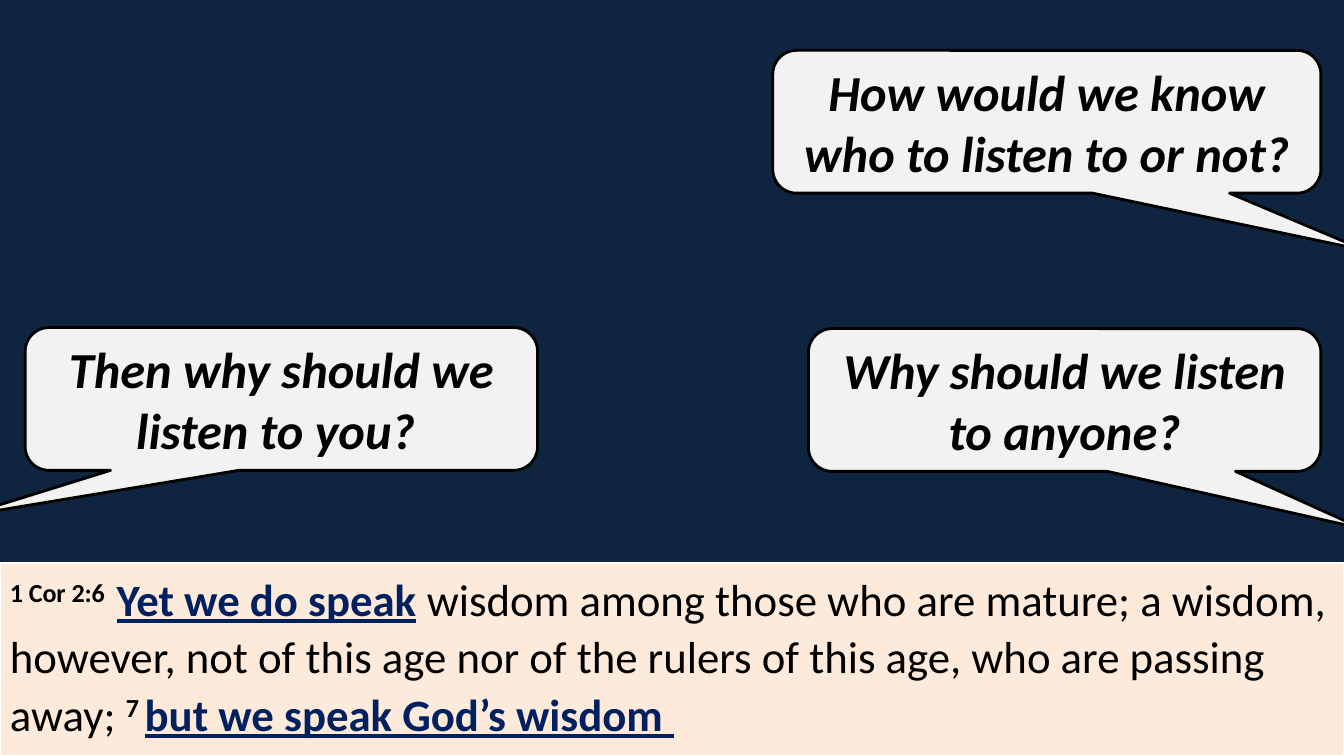
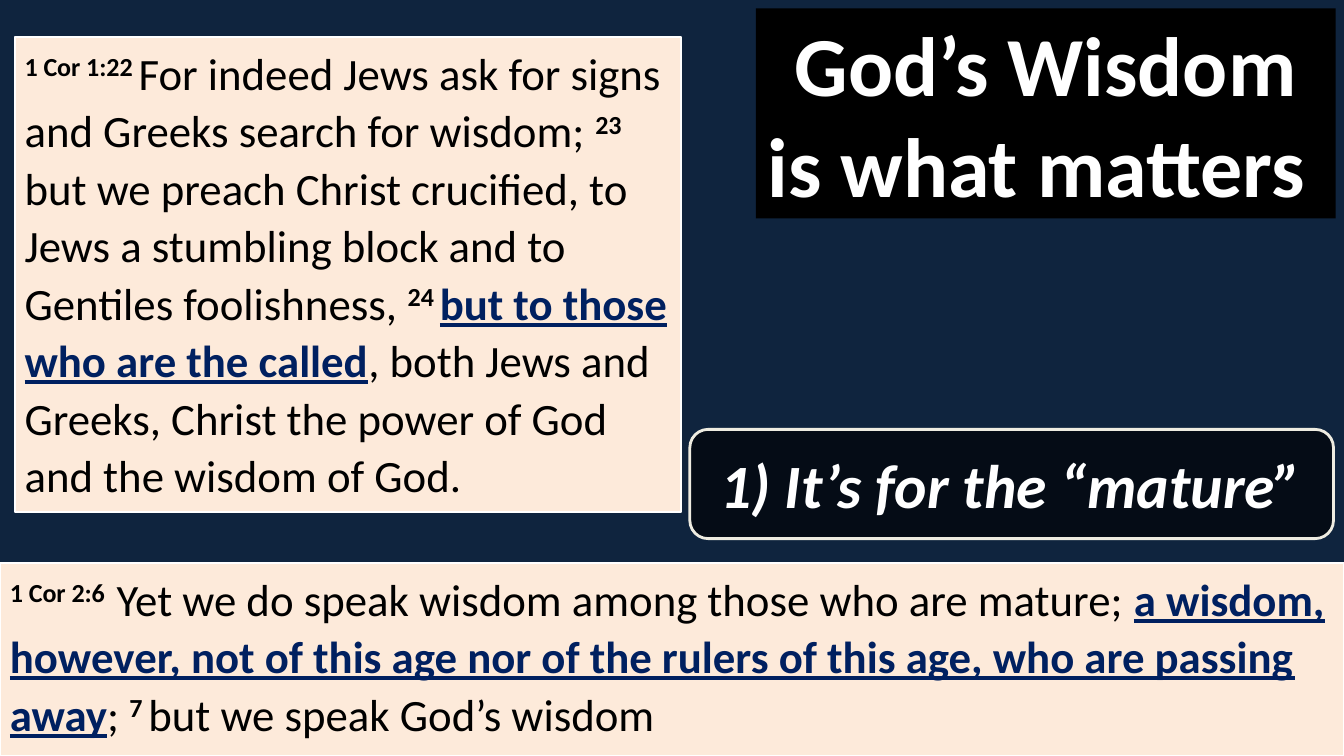
"""Builds two slides of callouts and verse panels on God's wisdom."""
from lxml import etree
from pptx import Presentation
from pptx import util as u
from pptx.dml.color import RGBColor
from pptx.enum import shapes, text
from pptx.oxml import ns

PX = 9525
FONT = "Calibri"
NIGHT = RGBColor(0x0F, 0x24, 0x3E)
PEACH = RGBColor(0xFD, 0xEA, 0xDA)
PALE = RGBColor(0xF2, 0xF2, 0xF2)
CREAM = RGBColor(0xEE, 0xEC, 0xE1)
NAVY = RGBColor(0x00, 0x20, 0x60)
BLACK = RGBColor(0x00, 0x00, 0x00)
WHITE = RGBColor(0xFF, 0xFF, 0xFF)

RECT = shapes.MSO_SHAPE.RECTANGLE
CALLOUT = shapes.MSO_SHAPE.ROUNDED_RECTANGULAR_CALLOUT
PANEL = (0, 536, 1280, 184)


def add_box(slide, kind, box, fill, line, width):
    sp = slide.shapes.add_shape(kind, *[v * PX for v in box])
    sp.shadow.inherit = False
    sp.fill.solid()
    sp.fill.fore_color.rgb = fill
    sp.line.color.rgb = line
    sp.line.width = u.Pt(width)
    sp.text_frame.word_wrap = True
    return sp


def write(tf, runs, size, align, italic=False):
    p = tf.paragraphs[0]
    p.alignment = align
    for words, style, color in runs:
        r = p.add_run()
        r.text = words
        r.font.name = FONT
        r.font.size = u.Pt(size)
        r.font.bold = style != "plain"
        r.font.italic = italic
        r.font.underline = style == "key"
        r.font.color.rgb = color
        if style == "ref":
            r._r.get_or_add_rPr().set("baseline", "30000")
    return p


prs = Presentation()
prs.slide_width, prs.slide_height = 1280 * PX, 720 * PX
questions = prs.slides.add_slide(prs.slide_layouts[6])
wisdom = prs.slides.add_slide(prs.slide_layouts[5])
for s in prs.slides:
    s.background.fill.solid()
    s.background.fill.fore_color.rgb = NIGHT

verses = [
    (questions, PANEL, [
        ("1 Cor 2:6  ", "ref", BLACK),
        ("Yet we do speak", "key", NAVY),
        (" ", "bold", NAVY),
        ("wisdom among those who are mature; a wisdom, however, not of this age "
         "nor of the rulers of this age, who are passing away; ", "plain", BLACK),
        ("7 ", "ref", BLACK),
        ("but we speak God’s wisdom ", "key", NAVY)]),
    (wisdom, PANEL, [
        ("1 Cor 2:6  ", "ref", BLACK),
        ("Yet we do speak wisdom among those who are mature; ", "plain", BLACK),
        ("a wisdom, however, not of this age nor of the rulers of this age, "
         "who are passing away", "key", NAVY),
        ("; ", "plain", BLACK),
        ("7 ", "ref", BLACK),
        ("but we speak God’s wisdom", "plain", BLACK)]),
    (wisdom, (14, 35, 635, 453), [
        ("1 Cor 1:22 ", "ref", BLACK),
        ("For indeed Jews ask for signs and Greeks search for wisdom; ", "plain", BLACK),
        ("23 ", "ref", BLACK),
        ("but we preach Christ crucified, to Jews a stumbling block and to "
         "Gentiles foolishness, ", "plain", BLACK),
        ("24 ", "ref", BLACK),
        ("but to those who are the called", "key", NAVY),
        (", both Jews and Greeks, Christ the power of God and the wisdom of God. ",
         "plain", BLACK)]),
]
for s, box, runs in verses:
    sp = add_box(s, RECT, box, PEACH, WHITE, 1.5)
    sp.text_frame.vertical_anchor = text.MSO_ANCHOR.TOP
    p = write(sp.text_frame, runs, 32, text.PP_ALIGN.LEFT)
    p.line_spacing = 1.07

callouts = [
    (questions, (24, 312, 488, 136), (-0.62, 0.82), "Then why should we listen to you? ",
     36, PALE, BLACK, BLACK),
    (questions, (770, 313, 488, 136), (0.58, 0.9), "Why should we listen to anyone?",
     36, PALE, BLACK, BLACK),
    (questions, (736, 48, 522, 136), (0.58, 0.9), "How would we know who to listen to or not?",
     36, PALE, BLACK, BLACK),
    (wisdom, (657, 409, 613, 104), (-0.22, 0.5), "1) It’s for the “mature”",
     44, BLACK, CREAM, WHITE),
]
for s, box, tip, words, size, fill, line, color in callouts:
    sp = add_box(s, CALLOUT, box, fill, line, 2)
    sp.adjustments[0], sp.adjustments[1] = tip
    sp.text_frame.vertical_anchor = text.MSO_ANCHOR.MIDDLE
    write(sp.text_frame, [(words, "bold", color)], size, text.PP_ALIGN.CENTER, italic=True)

point_fill = sp.fill._xPr.find(ns.qn("a:solidFill"))[0]
etree.SubElement(point_fill, ns.qn("a:alpha")).set("val", "64000")

title = wisdom.shapes.title
title.left, title.top, title.width, title.height = [v * PX for v in (720, 8, 552, 200)]
title.fill.solid()
title.fill.fore_color.rgb = BLACK
title.text_frame.word_wrap = True
title.text_frame.auto_size = text.MSO_AUTO_SIZE.NONE
title.text_frame.vertical_anchor = text.MSO_ANCHOR.MIDDLE
write(title.text_frame, [("God’s Wisdom is what matters ", "bold", WHITE)], 60,
      text.PP_ALIGN.CENTER)

prs.save("out.pptx")
